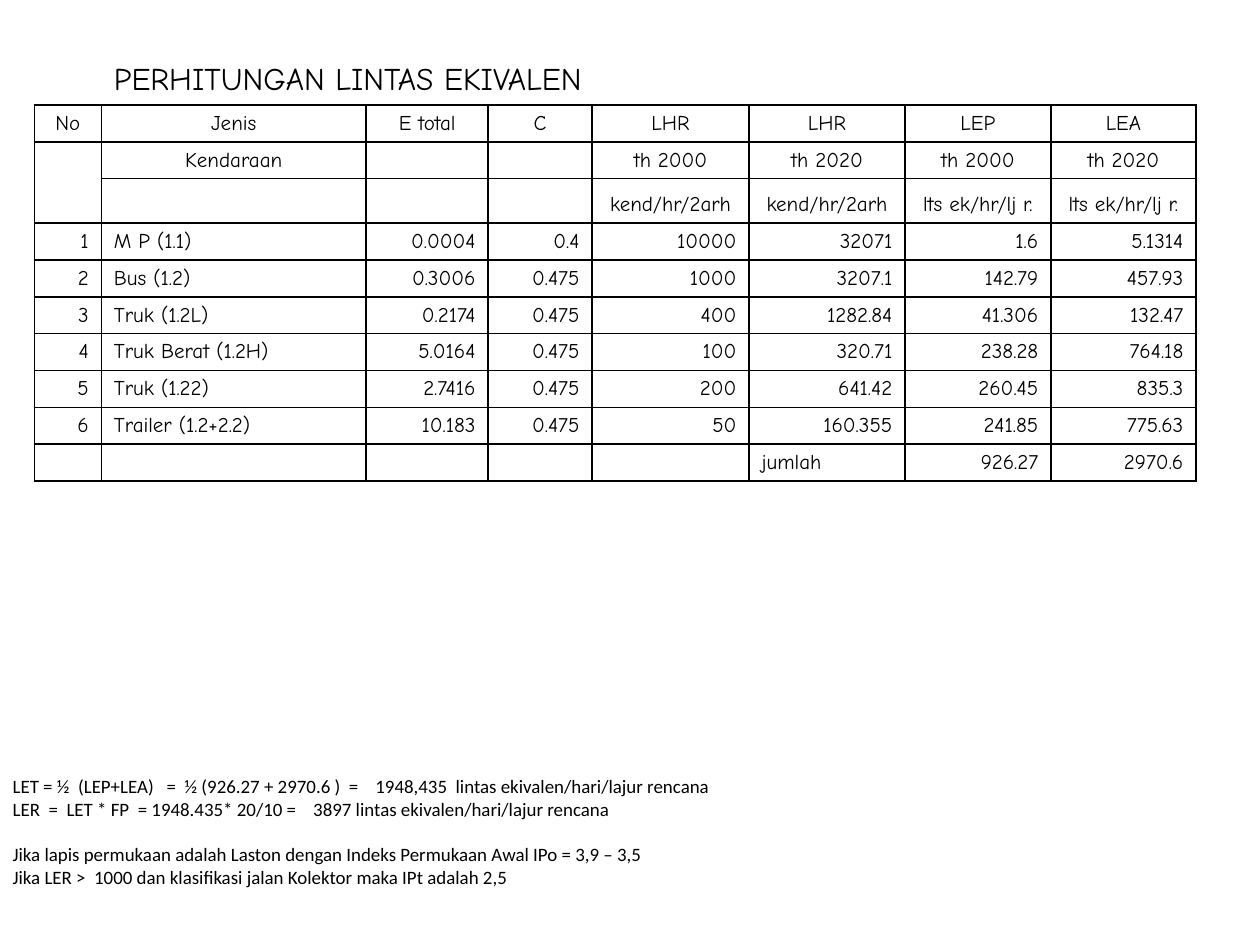
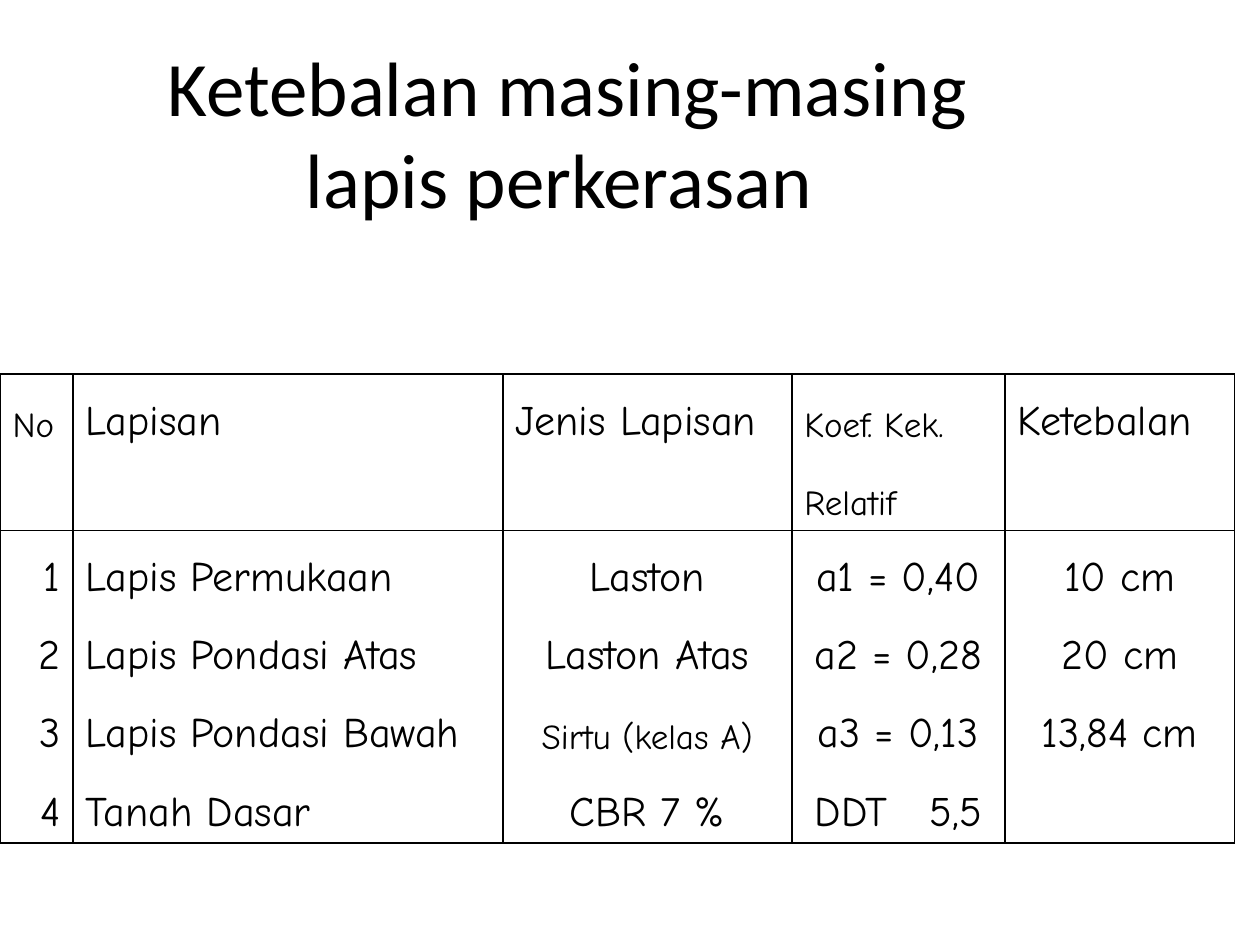
from lxml import etree
from pptx import Presentation
from pptx.dml.color import RGBColor
from pptx.enum.text import MSO_ANCHOR, MSO_AUTO_SIZE, PP_ALIGN
from pptx.oxml.ns import qn
from pptx.util import Pt

TOP, MID, LOW = MSO_ANCHOR.TOP, MSO_ANCHOR.MIDDLE, MSO_ANCHOR.BOTTOM
SIDES = {"l": PP_ALIGN.LEFT, "c": PP_ALIGN.CENTER, "r": PP_ALIGN.RIGHT}
NOFIT = MSO_AUTO_SIZE.NONE
INK = "000000"
SANS, HAND = "Calibri", "Comic Neue"

HEAD, BODY, SUM = "cccccccc", "rlrrrrrr", "llllllrr"
LANE = "rlccc"

SLIDES = [
    {
        "title": {
            "box": (0, 394.6, 720, 130.3), "size": 10.8, "side": "l",
            "anchor": TOP, "inset": 48,
            "lines": [
                ("LET = ½  (LEP+LEA)   =  ½ (926.27 + 2970.6 )  =    1948,435  lintas ekivalen/hari/lajur rencana", 0),
                ("LER  =  LET * FP  = 1948.435* 20/10 =    3897 lintas ekivalen/hari/lajur rencana", 0),
                ("Jika lapis permukaan adalah Laston dengan Indeks Permukaan Awal IPo = 3,9 – 3,5", 13),
                ("Jika LER >  1000 dan klasifikasi jalan Kolektor maka IPt adalah 2,5", 0),
            ],
        },
        "table": {
            "at": (19.6, 20.2), "size": 12,
            "sizes": {"PERHITUNGAN LINTAS EKIVALEN": 18},
            "cols": [38.3, 151.4, 69.7, 59.4, 89.7, 89.1, 83.4, 82.9],
            "high": [39.8, 20.9, 20.9, 25.5] + [20.9] * 7,
            "span": (1, 4), "open": {(2, 0)},
            "rows": [
                (SUM, ["", "PERHITUNGAN LINTAS EKIVALEN", "", "", "", "", "", ""]),
                (HEAD, ["No", "Jenis", "E total", "C", "LHR", "LHR", "LEP", "LEA"]),
                (HEAD, ["", "Kendaraan", "", "", "th 2000", "th 2020", "th 2000", "th 2020"]),
                (HEAD, ["", "", "", "", "kend/hr/2arh", "kend/hr/2arh", "lts ek/hr/lj r.", "lts ek/hr/lj r."]),
                (BODY, ["1", "M P (1.1)", "0.0004", "0.4", "10000", "32071", "1.6", "5.1314"]),
                (BODY, ["2", "Bus (1.2)", "0.3006", "0.475", "1000", "3207.1", "142.79", "457.93"]),
                (BODY, ["3", "Truk (1.2L)", "0.2174", "0.475", "400", "1282.84", "41.306", "132.47"]),
                (BODY, ["4", "Truk Berat (1.2H)", "5.0164", "0.475", "100", "320.71", "238.28", "764.18"]),
                (BODY, ["5", "Truk (1.22)", "2.7416", "0.475", "200", "641.42", "260.45", "835.3"]),
                (BODY, ["6", "Trailer (1.2+2.2)", "10.183", "0.475", "50", "160.355", "241.85", "775.63"]),
                (SUM, ["", "", "", "", "", "jumlah", "926.27", "2970.6"]),
            ],
        },
    },
    {
        "title": {
            "box": (54, 12.2, 540.7, 126), "size": 44, "side": "c",
            "anchor": MID, "inset": 3.6,
            "lines": [("Ketebalan masing-masing lapis perkerasan ", 0)],
        },
        "table": {
            "at": (0, 151.2), "size": 24,
            "sizes": dict.fromkeys(["No", "Koef. Kek.", "Relatif", "Sirtu (kelas A)"], 20),
            "cols": [41.7, 245.7, 165.1, 121.7, 131.4],
            "high": [62.6] + [44.67] * 6,
            "span": (0, 2), "open": {(r, c) for r in (1, 3, 4, 5) for c in range(5)},
            "rows": [
                ("lllll", ["", "", "", "", ""]),
                ("lllll", ["No", "Lapisan", "Jenis Lapisan", "Koef. Kek.", "Ketebalan"]),
                ("lllll", ["", "", "", "Relatif", ""]),
                (LANE, ["1", "Lapis Permukaan", "Laston", "a1 = 0,40", "10 cm"]),
                (LANE, ["2", "Lapis Pondasi Atas", "Laston Atas", "a2 = 0,28", "20 cm"]),
                (LANE, ["3", "Lapis Pondasi Bawah", "Sirtu (kelas A)", "a3 = 0,13", "13,84 cm"]),
                (LANE, ["4", "Tanah Dasar", "CBR 7 %", "DDT   5,5", ""]),
            ],
        },
    },
]


def tint(code):
    return RGBColor.from_string(code)


def put(item, vals):
    for key, val in vals.items():
        setattr(item, key, val)


def write(para, text, face, size, side):
    para.alignment = SIDES[side]
    if not text:
        end = etree.SubElement(para._p, qn("a:endParaRPr"))
        end.set("sz", str(int(size * 100)))
        etree.SubElement(end, qn("a:latin")).set("typeface", face)
        return
    run = para.add_run()
    run.text = text
    put(run.font, {"name": face, "size": Pt(size), "bold": False})
    run.font.color.rgb = tint(INK)


def edge(cell, shown):
    props = cell._tc.get_or_add_tcPr()
    for i, (tag, on) in enumerate(shown.items()):
        line = etree.Element(qn("a:ln" + tag), w=str(Pt(1)))
        fill = etree.SubElement(line, qn("a:solidFill" if on else "a:noFill"))
        if on:
            etree.SubElement(fill, qn("a:srgbClr")).set("val", INK)
        props.insert(i, line)


def head(slide, data):
    shape = slide.shapes.title
    put(shape, dict(zip(("left", "top", "width", "height"), map(Pt, data["box"]))))
    frame = shape.text_frame
    put(frame, {"word_wrap": True, "auto_size": NOFIT,
                "vertical_anchor": data["anchor"], "margin_top": Pt(data["inset"])})
    for i, (text, gap) in enumerate(data["lines"]):
        para = frame.add_paragraph() if i else frame.paragraphs[0]
        para.space_before = Pt(gap)
        write(para, text, SANS, data["size"], data["side"])


def grid(slide, data):
    rows, cols, high = data["rows"], data["cols"], data["high"]
    area = (*data["at"], sum(cols), sum(high))
    table = slide.shapes.add_table(len(rows), len(cols), *map(Pt, area)).table
    put(table, {"first_row": False, "horz_banding": False})
    for col, wide in zip(table.columns, cols):
        col.width = Pt(wide)
    for r, (sides, texts) in enumerate(rows):
        table.rows[r].height = Pt(high[r])
        for c, (side, text) in enumerate(zip(sides, texts)):
            cell = table.cell(r, c)
            cell.vertical_anchor = LOW
            cell.fill.background()
            edge(cell, {"L": r > 0, "R": r > 0,
                        "T": r > 0 and (r - 1, c) not in data["open"],
                        "B": (r, c) not in data["open"]})
            size = data["sizes"].get(text, data["size"])
            write(cell.text_frame.paragraphs[0], text, HAND, size, side)
    start, stop = data["span"]
    table.cell(0, start).merge(table.cell(0, stop))


def main():
    deck = Presentation()
    put(deck, {"slide_width": Pt(720), "slide_height": Pt(540)})
    for data in SLIDES:
        slide = deck.slides.add_slide(deck.slide_layouts[5])
        head(slide, data["title"])
        grid(slide, data["table"])
    deck.save("out.pptx")


if __name__ == "__main__":
    main()
